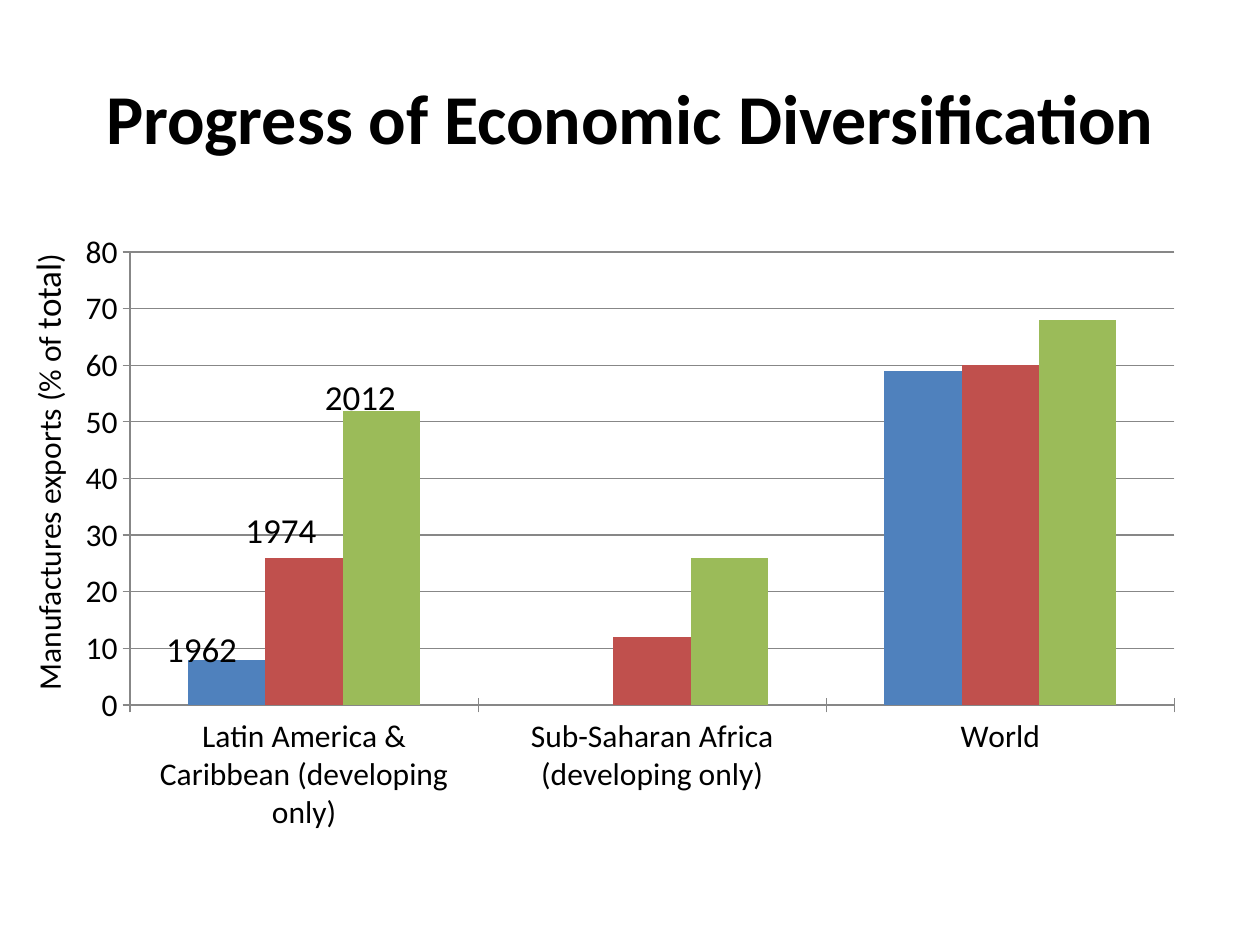
"""Build a slide charting manufactures exports by region in three years."""
from pptx import Presentation
from pptx.chart.data import CategoryChartData
from pptx.dml.color import RGBColor
from pptx.enum.chart import XL_CHART_TYPE, XL_TICK_MARK
from pptx.enum.text import MSO_ANCHOR, MSO_AUTO_SIZE, PP_ALIGN
from pptx.util import Inches, Pt

CLUSTERED = XL_CHART_TYPE.COLUMN_CLUSTERED
CROSS = XL_TICK_MARK.CROSS
MIDDLE = MSO_ANCHOR.MIDDLE
CENTER = PP_ALIGN.CENTER
FIT_SHAPE = MSO_AUTO_SIZE.SHAPE_TO_FIT_TEXT

FONT = "Calibri"
COLORS = {
    "text": "000000",
    "axis": "878787",
    "Series 1": "4F81BD",
    "Series 2": "C0504D",
    "Series 3": "9BBB59",
}
EXPORT_SHARES = {
    "Series 1": (8, None, 59),
    "Series 2": (26, 12, 60),
    "Series 3": (52, 26, 68),
}
REGIONS = (
    "Latin America & Caribbean (developing only)",
    "Sub-Saharan Africa (developing only)",
    "World",
)


def style_font(font, size, bold=False):
    for attribute, value in {"name": FONT, "size": Pt(size), "bold": bold}.items():
        setattr(font, attribute, value)
    font.color.rgb = RGBColor.from_string(COLORS["text"])


def add_label(slide, box, pieces, rotation=0):
    label = slide.shapes.add_textbox(*map(Inches, box))
    label.rotation = rotation
    label.text_frame.word_wrap = False
    label.text_frame.auto_size = FIT_SHAPE
    for words, size in pieces:
        run = label.text_frame.paragraphs[0].add_run()
        run.text = words
        style_font(run.font, size)


prs = Presentation()
prs.slide_width, prs.slide_height = Inches(10), Inches(7.5)
slide = prs.slides.add_slide(prs.slide_layouts[5])

title = slide.shapes.title
title_place = {"left": 0.5, "top": 0.3, "width": 9, "height": 1.25}
for side, length in title_place.items():
    setattr(title, side, Inches(length))
title.text_frame.text = "Progress of Economic Diversification"
title.text_frame.vertical_anchor = MIDDLE
heading = title.text_frame.paragraphs[0]
heading.alignment = CENTER
style_font(heading.runs[0].font, 40, True)

axis_caption = (("Manufactures exports (% of ", 18), ("total", 20), (")", 18))
add_label(slide, (-1.48, 3.5, 3.71, 0.44), axis_caption, 270)

export_data = CategoryChartData()
export_data.categories = REGIONS
for name, shares in EXPORT_SHARES.items():
    export_data.add_series(name, shares)
chart = slide.shapes.add_chart(
    CLUSTERED, Inches(0.5), Inches(1.75), Inches(9), Inches(4.95), export_data
).chart
chart.has_legend = False
chart.has_title = False
style_font(chart.font, 18)

columns = chart.plots[0]
columns.gap_width = 150
columns.overlap = 0
columns.vary_by_categories = False
for series in columns.series:
    series.invert_if_negative = False
    series.format.fill.solid()
    series.format.fill.fore_color.rgb = RGBColor.from_string(COLORS[series.name])

share_axis = chart.value_axis
share_axis.minimum_scale, share_axis.maximum_scale = 0, 80
share_axis.major_unit = 10
share_axis.has_major_gridlines = True
for axis in (chart.category_axis, share_axis):
    axis.major_tick_mark = CROSS
for lines in (chart.category_axis, share_axis, share_axis.major_gridlines):
    lines.format.line.color.rgb = RGBColor.from_string(COLORS["axis"])
    lines.format.line.width = Pt(0.75)

year_tops = {"1962": 4.93, "1974": 3.99, "2012": 2.93}
for index, (year, top) in enumerate(year_tops.items()):
    add_label(slide, (1.22 + 0.63 * index, top, 0.77, 0.44), ((year, 20),))

prs.save("out.pptx")
